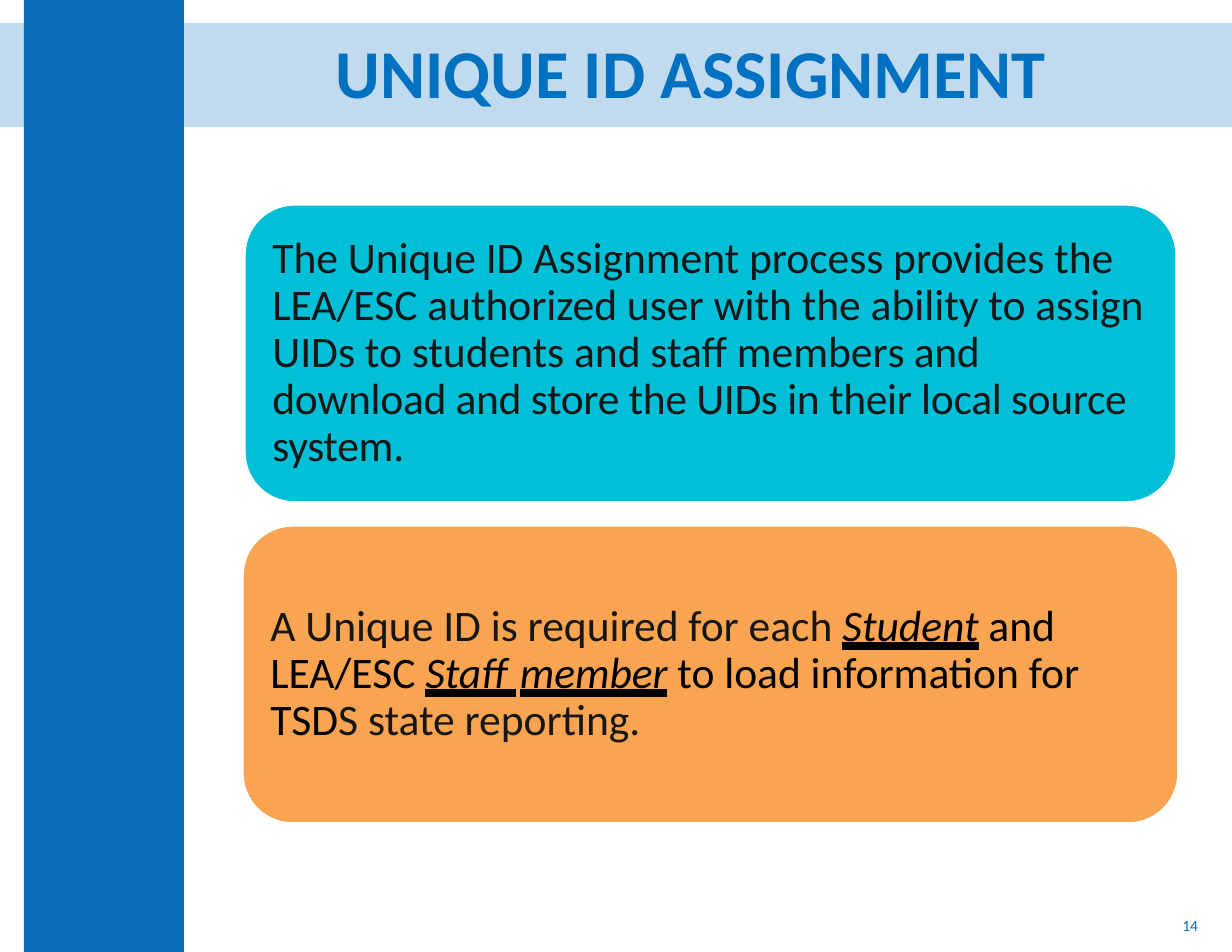
from dataclasses import dataclass

from lxml.etree import SubElement
from pptx import Presentation
from pptx.dml.color import RGBColor
from pptx.enum.shapes import MSO_SHAPE
from pptx.enum.text import MSO_ANCHOR, MSO_UNDERLINE, PP_ALIGN
from pptx.oxml.ns import qn
from pptx.util import Emu, Pt

EMU_PER_PX = 914400 / 112


def px(length):
    return Emu(round(length * EMU_PER_PX))


@dataclass(frozen=True)
class Theme:
    font: str = "Calibri"
    brand: str = "0D6CB9"
    heading: str = "0070C0"
    body: str = "161616"
    emphasis: str = "000000"
    outline: str = "FFFFFF"
    cyan: str = "00BFD7"
    orange: str = "F9A451"
    title_size: int = 44
    body_size: int = 28
    number_size: int = 10


@dataclass(frozen=True)
class Span:
    text: str
    color: str
    italic: bool = False
    underline: bool = False
    tracking: int = 0  # hundredths of a point


class SlideBuilder:
    def __init__(self, slide, theme):
        self.slide = slide
        self.theme = theme

    def block(self, kind, box, color, opacity=100):
        """Add a filled shape without outline or shadow."""
        shape = self.slide.shapes.add_shape(kind, *map(px, box))
        shape.shadow.inherit = False
        shape.fill.solid()
        shape.fill.fore_color.rgb = RGBColor.from_string(color)
        shape.line.fill.background()
        if opacity < 100:
            color_element = shape.fill._xPr.find(".//" + qn("a:srgbClr"))
            SubElement(color_element, qn("a:alpha"), val=str(opacity * 1000))
        return shape

    def style_run(self, run, size, color, bold=False):
        font = run.font
        font.name = self.theme.font
        font.size = Pt(size)
        font.bold = bold
        font.color.rgb = RGBColor.from_string(color)

    def label(self, box, text, size, alignment, bold=False):
        """Add a one-line text box in the heading colour."""
        shape = self.slide.shapes.add_textbox(*map(px, box))
        text_frame = shape.text_frame
        text_frame.word_wrap = True
        text_frame.vertical_anchor = MSO_ANCHOR.MIDDLE
        text_frame.text = text
        paragraph = text_frame.paragraphs[0]
        paragraph.alignment = alignment
        paragraph.line_spacing = 0.9
        self.style_run(paragraph.runs[0], size, self.theme.heading, bold)

    def card(self, box, color, spans):
        """Add a rounded card holding one paragraph of mixed runs."""
        shape = self.block(MSO_SHAPE.ROUNDED_RECTANGLE, box, color)
        shape.line.color.rgb = RGBColor.from_string(self.theme.outline)
        shape.line.width = Pt(1)
        text_frame = shape.text_frame
        text_frame.word_wrap = True
        text_frame.vertical_anchor = MSO_ANCHOR.MIDDLE
        for side in ("left", "top", "right", "bottom"):
            setattr(text_frame, f"margin_{side}", px(13))
        paragraph = text_frame.paragraphs[0]
        paragraph.alignment = PP_ALIGN.LEFT
        paragraph.line_spacing = 0.9
        for span in spans:
            run = paragraph.add_run()
            run.text = span.text
            self.style_run(run, self.theme.body_size, span.color)
            run.font.italic = span.italic
            if span.underline:
                run.font.underline = MSO_UNDERLINE.HEAVY_LINE
            if span.tracking:
                run.font._element.set("spc", str(span.tracking))


def main():
    theme = Theme()
    presentation = Presentation()
    presentation.slide_width = px(1232)
    presentation.slide_height = px(952)
    slide = presentation.slides.add_slide(presentation.slide_layouts[6])
    builder = SlideBuilder(slide, theme)

    # Header band and side bar
    builder.block(MSO_SHAPE.RECTANGLE, (0, 23, 1232, 104), theme.brand, opacity=25)
    builder.block(MSO_SHAPE.RECTANGLE, (24, 0, 160, 952), theme.brand)

    # Slide number and title
    builder.label((931, 902, 278, 50), "14", theme.number_size, PP_ALIGN.RIGHT)
    builder.label((205, 26, 973, 101), "UNIQUE ID ASSIGNMENT",
                  theme.title_size, PP_ALIGN.CENTER, bold=True)

    # Process card
    builder.card((245, 205, 931, 297), theme.cyan, [
        Span("The Unique ID Assignment process provides the LEA/ESC authorized "
             "user with the ability to assign UIDs to students and staff member",
             theme.body),
        Span("s and download and store the UIDs in their local source system",
             theme.body, tracking=-20),
        Span(".", theme.body),
    ])

    # Requirement card
    builder.card((243, 526, 935, 297), theme.orange, [
        Span("A Unique ID is required for each ", theme.body),
        Span("Student", theme.emphasis, italic=True, underline=True),
        Span(" and LEA/ESC ", theme.emphasis),
        Span("Staff", theme.emphasis, italic=True, underline=True),
        Span(" ", theme.emphasis, italic=True, underline=True, tracking=220),
        Span("member", theme.emphasis, italic=True, underline=True),
        Span(" to load information for TSD", theme.emphasis),
        Span("S state reporting.", theme.body),
    ])

    presentation.save("out.pptx")


if __name__ == "__main__":
    main()
